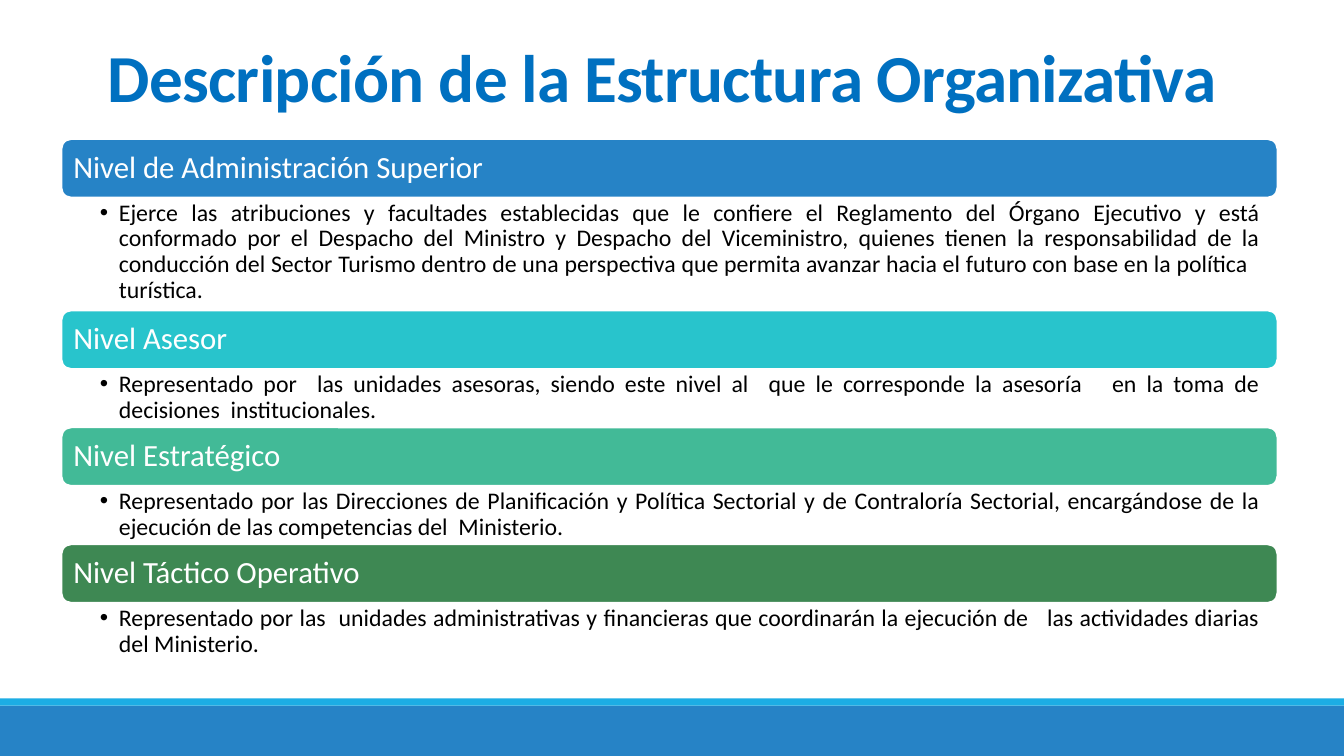
from lxml import etree
from pptx import Presentation
from pptx.dml.color import RGBColor
from pptx.enum import shapes, text
from pptx.oxml import ns
from pptx.util import Inches, Pt


def paint(color_format, hex_color):
    """Set a fill, a line fill or a font fill to one solid colour."""
    color_format.solid()
    color_format.fore_color.rgb = RGBColor.from_string(hex_color)


def write(shape, wording, size, hex_color, anchor, insets, spacing=0.9):
    """Put one paragraph into a shape and return the paragraph and its run."""
    frame = shape.text_frame
    frame.word_wrap = True
    frame.vertical_anchor = anchor
    frame.margin_left, frame.margin_top, frame.margin_right, frame.margin_bottom = map(Inches, insets)
    paragraph = frame.paragraphs[0]
    paragraph.alignment = text.PP_ALIGN.LEFT
    paragraph.line_spacing = spacing
    run = paragraph.add_run()
    run.text = wording
    run.font.name = "Calibri"
    run.font.size = Pt(size)
    paint(run.font.fill, hex_color)
    return paragraph, run


presentation = Presentation()
presentation.slide_width = Inches(13.33)
presentation.slide_height = Inches(7.5)
slide = presentation.slides.add_slide(presentation.slide_layouts[6])

# Footer bands
for top, height, color in [(7, 0.5, "2683C6"), (6.93, 0.07, "1CADE4")]:
    band = slide.shapes.add_shape(
        shapes.MSO_SHAPE.RECTANGLE, 0, Inches(top), presentation.slide_width, Inches(height))
    band.shadow.inherit = False
    paint(band.fill, color)
    band.line.fill.background()

# Title
title = slide.shapes.add_textbox(Inches(0.97), 0, Inches(11.33), Inches(1.2))
paragraph, run = write(title, "Descripción de la Estructura Organizativa", 48, "0070C0",
                       text.MSO_ANCHOR.BOTTOM, (0.1, 0.05, 0.1, 0.05), 0.85)
run.font.bold = True
run.font._element.set("spc", "-50")

# Levels: heading, bar colour, description, description height
levels = [
    ("Nivel de Administración Superior", "2683C6",
     "Ejerce las atribuciones y facultades establecidas que le confiere el Reglamento del Órgano "
     "Ejecutivo y está conformado por el Despacho del Ministro y Despacho del Viceministro, quienes "
     "tienen la responsabilidad de la conducción del Sector Turismo dentro de una perspectiva que "
     "permita avanzar hacia el futuro con base en la política   turística.", 1.12),
    ("Nivel Asesor", "28C4CC",
     "Representado por  las unidades asesoras, siendo este nivel al  que le corresponde la asesoría   "
     "en la toma de decisiones  institucionales.", 0.58),
    ("Nivel Estratégico", "42BA97",
     "Representado por las Direcciones de Planificación y Política Sectorial y de Contraloría "
     "Sectorial, encargándose de la ejecución de las competencias del  Ministerio.", 0.58),
    ("Nivel Táctico Operativo", "3E8853",
     "Representado por las  unidades administrativas y financieras que coordinarán la ejecución de   "
     "las actividades diarias del Ministerio.", 0.58),
]
left, width, bar_height = 0.61, 12.06, 0.58
top = 1.38

for heading, color, description, description_height in levels:
    # Heading bar
    bar = slide.shapes.add_shape(
        shapes.MSO_SHAPE.ROUNDED_RECTANGLE,
        Inches(left), Inches(top), Inches(width), Inches(bar_height))
    bar.shadow.inherit = False
    paint(bar.fill, color)
    paint(bar.line.fill, "FFFFFF")
    bar.line.width = Pt(1.25)
    write(bar, heading, 22, "FFFFFF", text.MSO_ANCHOR.MIDDLE, (0.09, 0.09, 0.09, 0.09))
    top += bar_height

    # Bulleted description
    box = slide.shapes.add_textbox(
        Inches(left), Inches(top), Inches(width), Inches(description_height))
    paragraph, run = write(box, description, 17, "000000",
                           text.MSO_ANCHOR.TOP, (0.38, 0.03, 0.17, 0.03))
    paragraph.alignment = text.PP_ALIGN.JUSTIFY
    properties = paragraph._p.get_or_add_pPr()
    properties.set("marL", str(Inches(0.19)))
    properties.set("indent", str(-Inches(0.19)))
    etree.SubElement(properties, ns.qn("a:buFont")).set("typeface", "Arial")
    etree.SubElement(properties, ns.qn("a:buChar")).set("char", "•")
    top += description_height

presentation.save("out.pptx")
